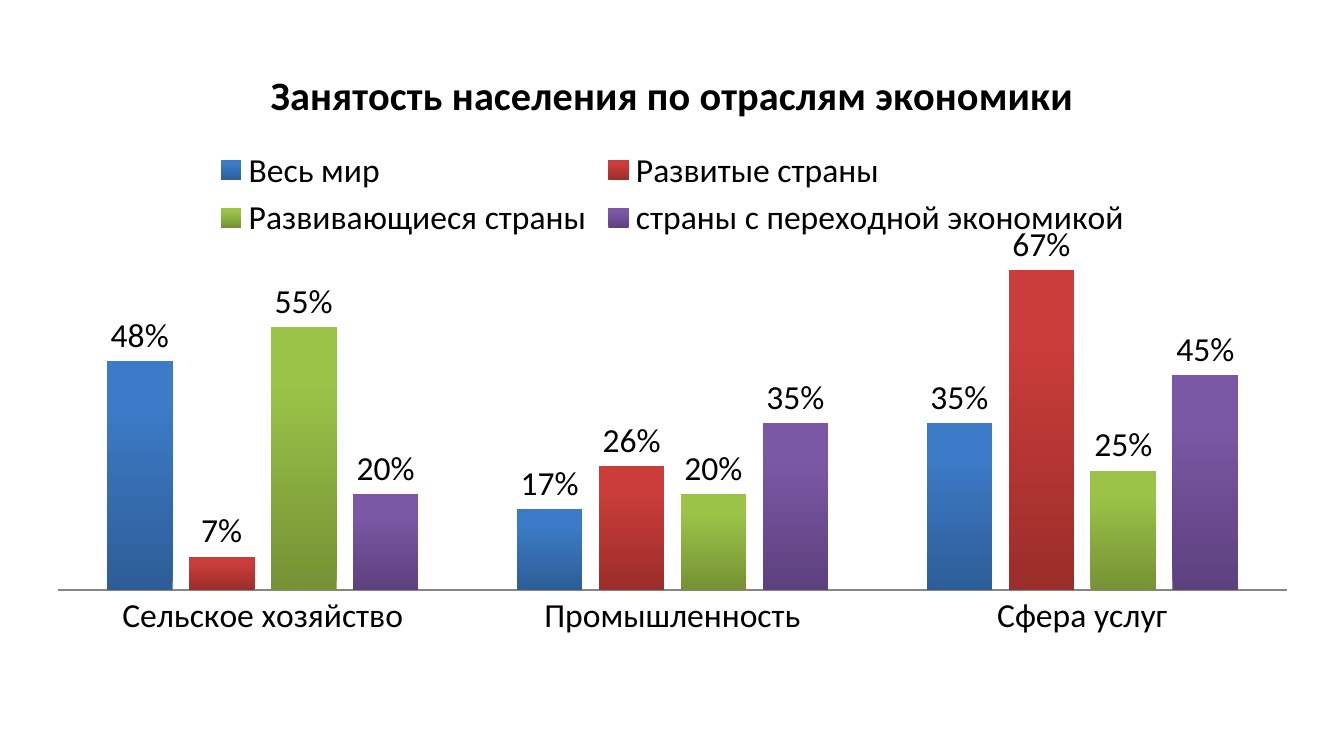
"""Build a slide with a clustered column chart of employment by sector."""
import pptx
import pptx.chart.data
import pptx.dml.color
import pptx.enum.chart
import pptx.oxml
import pptx.oxml.ns
import pptx.util

RGB = pptx.dml.color.RGBColor
BLACK = RGB(0x00, 0x00, 0x00)
GREY = RGB(0x86, 0x86, 0x86)
WIDE = pptx.util.Inches(10)
HIGH = WIDE * 9 // 16
FONT = {"name": "Calibri", "size": pptx.util.Pt(18), "bold": False}
HEAD = {**FONT, "size": pptx.util.Pt(21.6), "bold": True}
PLOT = {"x": 0.016, "y": 0.274, "w": 0.968, "h": 0.62}
CATS = ["Сельское хозяйство", "Промышленность", "Сфера услуг"]
ROWS = [
    ("Весь мир", (0.48, 0.17, 0.35),
     RGB(0x2D, 0x5D, 0x97), RGB(0x3C, 0x7B, 0xC7)),
    ("Развитые страны", (0.07, 0.26, 0.67),
     RGB(0x9B, 0x2D, 0x2A), RGB(0xCB, 0x3D, 0x3A)),
    ("Развивающиеся страны", (0.55, 0.2, 0.25),
     RGB(0x76, 0x92, 0x35), RGB(0x9B, 0xC3, 0x48)),
    ("страны с переходной экономикой", (0.2, 0.35, 0.45),
     RGB(0x5D, 0x41, 0x7E), RGB(0x7B, 0x58, 0xA6)),
]


def style(item, values):
    """Set attributes from a dict of format values."""
    for key, value in values.items():
        setattr(item, key, value)


def ink(font, values):
    """Format a font in black."""
    style(font, values)
    font.color.rgb = BLACK


def add_chart(slide):
    """Add the column chart with its data."""
    data = pptx.chart.data.CategoryChartData(number_format="0%")
    data.categories = CATS
    for name, values, *_ in ROWS:
        data.add_series(name, values)
    box = [round(n) for n in
           (0.028 * WIDE, 0.052 * HIGH, 0.945 * WIDE, 0.815 * HIGH)]
    kind = pptx.enum.chart.XL_CHART_TYPE.COLUMN_CLUSTERED
    return slide.shapes.add_chart(kind, *box, data).chart


def set_text(chart):
    """Format the title, the legend and the base font."""
    ink(chart.font, FONT)
    chart.has_title = True
    frame = chart.chart_title.text_frame
    frame.text = "Занятость населения по отраслям экономики"
    ink(frame.paragraphs[0].runs[0].font, HEAD)
    chart.chart_title.include_in_layout = False
    chart.has_legend = True
    style(chart.legend, {
        "position": pptx.enum.chart.XL_LEGEND_POSITION.TOP,
        "include_in_layout": False})
    ink(chart.legend.font, FONT)


def set_axes(chart):
    """Show the category line and hide the value axis."""
    none = pptx.enum.chart.XL_TICK_MARK.NONE
    ticks = {"major_tick_mark": none, "minor_tick_mark": none,
             "has_major_gridlines": False}
    style(chart.category_axis, ticks)
    chart.category_axis.format.line.color.rgb = GREY
    style(chart.value_axis, {**ticks, "visible": False,
                             "minimum_scale": 0, "maximum_scale": 0.8})
    style(chart.value_axis.tick_labels,
          {"number_format": "0%", "number_format_is_linked": False})


def set_bars(plot):
    """Space the columns, shade them and label them."""
    style(plot, {"gap_width": 150, "overlap": -25,
                 "vary_by_categories": False})
    for bars, (_, _, dark, light) in zip(plot.series, ROWS):
        fill = bars.format.fill
        fill.gradient()
        fill.gradient_angle = 90
        for stop, place, color in zip(fill.gradient_stops, (0, 0.8),
                                      (dark, light)):
            stop.position = place
            stop.color.rgb = color
        bars.invert_if_negative = False
        style(bars.data_labels, {
            "show_value": True, "number_format": "0%",
            "number_format_is_linked": False,
            "position": pptx.enum.chart.XL_LABEL_POSITION.OUTSIDE_END})
        ink(bars.data_labels.font, FONT)


def set_plot(chart):
    """Place the inner plot area by shares of the chart."""
    area = chart.element.find(".//" + pptx.oxml.ns.qn("c:plotArea"))
    for old in area.findall(pptx.oxml.ns.qn("c:layout")):
        area.remove(old)
    sides = "".join(f'<c:{key}Mode val="edge"/>' for key in "xy")
    sides += "".join(f'<c:{key} val="{n}"/>' for key, n in PLOT.items())
    area.insert(0, pptx.oxml.parse_xml(
        f'<c:layout {pptx.oxml.ns.nsdecls("c")}><c:manualLayout>'
        f'<c:layoutTarget val="inner"/>{sides}'
        '</c:manualLayout></c:layout>'))


def main():
    """Build and save the slide."""
    deck = pptx.Presentation()
    style(deck, {"slide_width": WIDE, "slide_height": HIGH})
    slide = deck.slides.add_slide(deck.slide_layouts[6])
    chart = add_chart(slide)
    set_text(chart)
    set_axes(chart)
    set_bars(chart.plots[0])
    set_plot(chart)
    deck.save("out.pptx")


if __name__ == "__main__":
    main()
